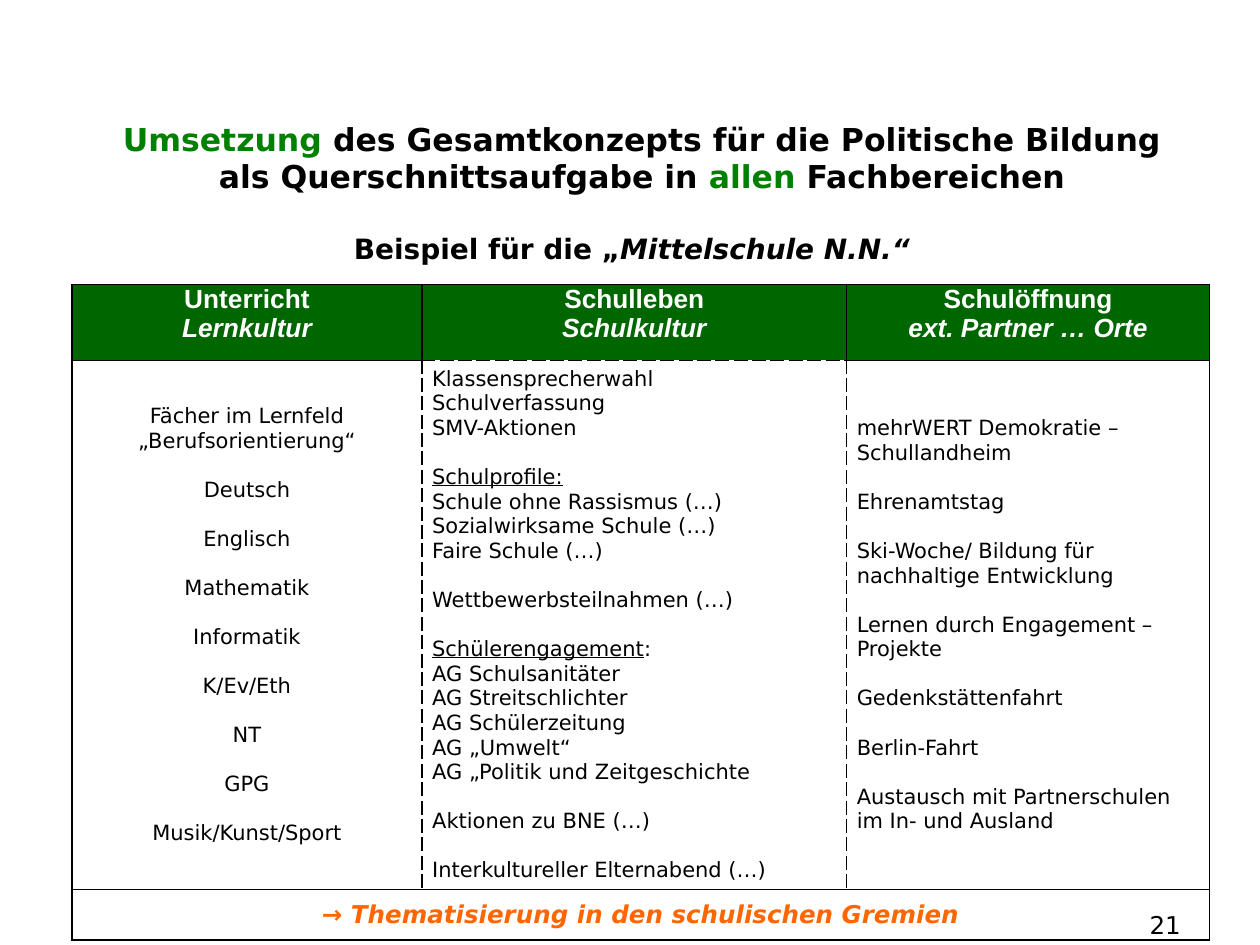
from dataclasses import dataclass

from lxml import etree
from pptx import Presentation
from pptx.dml.color import RGBColor
from pptx.enum.text import MSO_ANCHOR, PP_ALIGN
from pptx.oxml.ns import qn
from pptx.util import Inches, Pt

LEFT, CENTER, RIGHT = PP_ALIGN.LEFT, PP_ALIGN.CENTER, PP_ALIGN.RIGHT
TOP, MIDDLE = MSO_ANCHOR.TOP, MSO_ANCHOR.MIDDLE
WIDTH, HEIGHT = Inches(10), Inches(7.5)
COLUMNS, ROWS = 100, 75


@dataclass(frozen=True)
class Theme:
    font: str = "DejaVu Sans"
    header_font: str = "Arial"
    text: str = "000000"
    paper: str = "FFFFFF"
    accent: str = "008000"
    header: str = "006600"
    closing: str = "FF6600"
    title: float = 18
    subtitle: float = 16
    heading: float = 15
    note: float = 14
    body: float = 12
    gap: float = 14
    border: float = 1


class Deck:
    def __init__(self, theme):
        self.theme = theme
        self.prs = Presentation()
        self.prs.slide_width, self.prs.slide_height = WIDTH, HEIGHT
        self.s = self.prs.slides.add_slide(self.prs.slide_layouts[6])

    def x(self, columns):
        return round(WIDTH * columns / COLUMNS)

    def y(self, rows):
        return round(HEIGHT * rows / ROWS)

    def place(self, left, top, width, height):
        return self.x(left), self.y(top), self.x(width), self.y(height)

    def textbox(self, *box):
        tf = self.s.shapes.add_textbox(*self.place(*box)).text_frame
        tf.word_wrap = True
        return tf

    def paragraph(self, tf, first, align=LEFT, before=0):
        p = tf.paragraphs[0] if first else tf.add_paragraph()
        p.alignment = align
        if before and not first:
            p.space_before = Pt(before)
        return p

    def run(self, p, text, size, color=None, font=None, **style):
        r = p.add_run()
        r.text = text
        r.font.size = Pt(size)
        r.font.name = font or self.theme.font
        r.font.color.rgb = RGBColor.from_string(color or self.theme.text)
        for name, value in style.items():
            setattr(r.font, name, value)

    def table(self, left, top, widths, heights):
        box = self.place(left, top, sum(widths), sum(heights))
        table = self.s.shapes.add_table(len(heights), len(widths), *box).table
        for column, width in zip(table.columns, widths):
            column.width = self.x(width)
        for row, height in zip(table.rows, heights):
            row.height = self.y(height)
        return table

    def cell(self, cell, fill, anchor=MIDDLE, dashed=""):
        cell.margin_left = cell.margin_right = Inches(0.08)
        cell.margin_top = cell.margin_bottom = 0
        cell.vertical_anchor = anchor
        tcPr = cell._tc.get_or_add_tcPr()
        for side in "LRTB":
            ln = etree.SubElement(tcPr, qn(f"a:ln{side}"), w=str(Pt(self.theme.border)))
            color = etree.SubElement(ln, qn("a:solidFill"))
            etree.SubElement(color, qn("a:srgbClr"), val=self.theme.text)
            style = "dash" if side in dashed else "solid"
            etree.SubElement(ln, qn("a:prstDash"), val=style)
        cell.fill.solid()
        cell.fill.fore_color.rgb = RGBColor.from_string(fill)
        return cell.text_frame

    def groups(self, tf, groups, align):
        for g, group in enumerate(groups):
            for i, line in enumerate(group):
                before = 0 if i else self.theme.gap
                p = self.paragraph(tf, g == i == 0, align, before)
                runs = [(line, False)] if isinstance(line, str) else line
                for text, underline in runs:
                    self.run(p, text, self.theme.body, underline=underline)


HEADERS = [
    ("Unterricht", "Lernkultur"),
    ("Schulleben", "Schulkultur"),
    ("Schulöffnung", "ext. Partner … Orte"),
]
SUBJECTS = [
    ["Fächer im Lernfeld „Berufsorientierung“"], ["Deutsch"], ["Englisch"],
    ["Mathematik"], ["Informatik"], ["K/Ev/Eth"], ["NT"], ["GPG"],
    ["Musik/Kunst/Sport"],
]
SCHOOL_LIFE = [
    ["Klassensprecherwahl", "Schulverfassung", "SMV-Aktionen"],
    [[("Schulprofile:", True)], "Schule ohne Rassismus (…)",
     "Sozialwirksame Schule (…)", "Faire Schule (…)"],
    ["Wettbewerbsteilnahmen (…)"],
    [[("Schülerengagement", True), (":", False)], "AG Schulsanitäter",
     "AG Streitschlichter", "AG Schülerzeitung", "AG „Umwelt“",
     "AG „Politik und Zeitgeschichte"],
    ["Aktionen zu BNE (…)"],
    ["Interkultureller Elternabend (…)"],
]
PARTNERS = [
    ["mehrWERT Demokratie – Schullandheim"], ["Ehrenamtstag"],
    ["Ski-Woche/ Bildung für nachhaltige Entwicklung"],
    ["Lernen durch Engagement –Projekte"], ["Gedenkstättenfahrt"],
    ["Berlin-Fahrt"], ["Austausch mit Partnerschulen im In- und Ausland"],
]
BODY = [(SUBJECTS, CENTER, "R"), (SCHOOL_LIFE, LEFT, "LRT"), (PARTNERS, LEFT, "L")]


def main():
    theme = Theme()
    deck = Deck(theme)

    tf = deck.textbox(7.2, 9, 87.5, 12.1)
    p = deck.paragraph(tf, True, CENTER)
    deck.run(p, "Umsetzung", theme.title, theme.accent, bold=True)
    deck.run(p, " des Gesamtkonzepts für die Politische Bildung", theme.title, bold=True)
    p.add_line_break()
    deck.run(p, "als Querschnittsaufgabe in ", theme.title, bold=True)
    deck.run(p, "allen", theme.title, theme.accent, bold=True)
    deck.run(p, " Fachbereichen", theme.title, bold=True)
    p = deck.paragraph(tf, False, CENTER, 21)
    p._p.get_or_add_pPr().set("marR", str(deck.x(1.6)))
    deck.run(p, "Beispiel für die „", theme.subtitle, bold=True)
    deck.run(p, "Mittelschule N.N.“", theme.subtitle, bold=True, italic=True)

    table = deck.table(5.7, 22.6, [27.8, 33.7, 28.8], [6, 42, 4])
    for c, lines in enumerate(HEADERS):
        tf = deck.cell(table.cell(0, c), theme.header, TOP, "B" if c == 1 else "")
        for i, line in enumerate(lines):
            p = deck.paragraph(tf, i == 0, CENTER)
            deck.run(p, line, theme.heading, theme.paper, theme.header_font,
                     bold=True, italic=i == 1)
    for c, (groups, align, dashed) in enumerate(BODY):
        tf = deck.cell(table.cell(1, c), theme.paper, dashed=dashed)
        deck.groups(tf, groups, align)
    for c in range(len(HEADERS)):
        deck.cell(table.cell(2, c), theme.paper)
    table.cell(2, 0).merge(table.cell(2, 2))
    p = deck.paragraph(table.cell(2, 0).text_frame, True, CENTER)
    deck.run(p, "→ Thematisierung in den schulischen Gremien", theme.note,
             theme.closing, bold=True, italic=True)

    p = deck.paragraph(deck.textbox(72, 71.7, 22.7, 5.2), True, RIGHT)
    deck.run(p, "21", theme.note)

    deck.prs.save("out.pptx")


if __name__ == "__main__":
    main()
